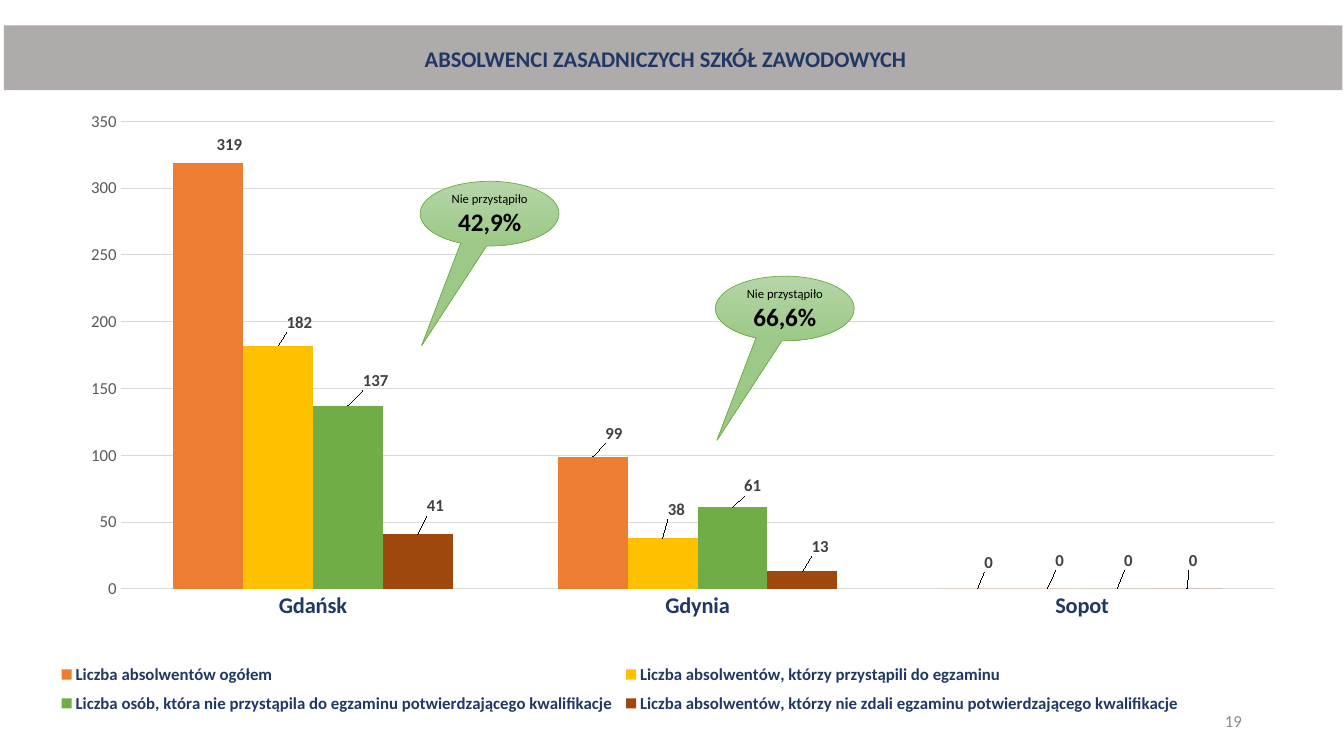
import pptx
import pptx.chart.data
import pptx.dml.color
import pptx.enum.chart
import pptx.enum.shapes
import pptx.enum.text
import pptx.oxml
import pptx.oxml.ns
import pptx.util

Cm, Pt = pptx.util.Cm, pptx.util.Pt
RGB = pptx.dml.color.RGBColor
ALIGN = pptx.enum.text.PP_ALIGN
ANCHOR = pptx.enum.text.MSO_ANCHOR
SHAPE = pptx.enum.shapes.MSO_SHAPE
XL = pptx.enum.chart

FONT = "Calibri"
BLACK, NAVY = RGB(0, 0, 0), RGB(0x20, 0x38, 0x64)
BAND = RGB(0xAF, 0xAB, 0xAB)
GRID, AXIS_TEXT = RGB(0xD9, 0xD9, 0xD9), RGB(0x59, 0x59, 0x59)
LABEL, PAGE_GREY = RGB(0x40, 0x40, 0x40), RGB(0x8C, 0x8C, 0x8C)
GREEN = RGB(0x70, 0xAD, 0x47)
BUBBLE = (RGB(0xB5, 0xD5, 0xA7), RGB(0x9C, 0xC9, 0x87))

TITLE = "ABSOLWENCI ZASADNICZYCH SZKÓŁ ZAWODOWYCH"
PAGE = "19"
CITIES = ["Gdańsk", "Gdynia", "Sopot"]
# name, colour, values, label shifts per city in thousandths of the chart size
SERIES = [
    ("Liczba absolwentów ogółem", RGB(0xED, 0x7D, 0x31), (319, 99, 0),
     ((17, -6), (17, -14), (9, -19))),
    ("Liczba absolwentów, którzy przystąpili do egzaminu",
     RGB(0xFF, 0xC0, 0), (182, 38, 0),
     ((17, -14), (11, -22), (10, -21))),
    ("Liczba osób, która nie przystąpila do egzaminu potwierdzającego kwalifikacje",
     GREEN, (137, 61, 0),
     ((22, -17), (16, -11), (9, -21))),
    ("Liczba absolwentów, którzy nie zdali egzaminu potwierdzającego kwalifikacje",
     RGB(0x9E, 0x48, 0x0E), (41, 13, 0),
     ((14, -21), (14, -17), (5, -21))),
]
CALLOUT_TEXT = "Nie przystąpiło"
CALLOUTS = [("42,9%", 10.59, 4.57), ("66,6%", 18.03, 6.96)]  # left, top in cm


def style(font, size, color, bold=False):
    font.name, font.size, font.bold = FONT, Pt(size), bold
    font.color.rgb = color


def write(tf, lines, align, anchor=ANCHOR.TOP, wrap=True):
    """Fill a frame with one paragraph per (text, size, colour, bold)."""
    tf.word_wrap, tf.vertical_anchor = wrap, anchor
    for i, (text, *look) in enumerate(lines):
        p = tf.paragraphs[0] if i == 0 else tf.add_paragraph()
        p.alignment = align
        r = p.add_run()
        r.text = text
        style(r.font, *look)


def layout(x, y, w=None, h=None, inner=False):
    """Manual chart layout; without a size, x and y are shifts."""
    parts = [("layoutTarget", "inner")] if inner else []
    if w is not None:
        parts += [("xMode", "edge"), ("yMode", "edge")]
    parts += [("x", x), ("y", y)]
    if w is not None:
        parts += [("w", w), ("h", h)]
    body = "".join(f'<c:{tag} val="{val}"/>' for tag, val in parts)
    return pptx.oxml.parse_xml(
        f'<c:layout {pptx.oxml.ns.nsdecls("c")}>'
        f'<c:manualLayout>{body}</c:manualLayout></c:layout>')


def add_title(s):
    band = s.shapes.add_shape(SHAPE.RECTANGLE, Cm(0.1), Cm(0.64), Cm(33.73), Cm(1.63))
    band.shadow.inherit = False
    band.fill.solid()
    band.fill.fore_color.rgb = BAND
    band.line.fill.background()
    box = s.shapes.add_textbox(Cm(-0.41), Cm(1.02), Cm(34.37), Cm(0.94))
    write(box.text_frame, [(TITLE, 16, NAVY, True)], ALIGN.CENTER)


def add_graduates_chart(s):
    data = pptx.chart.data.CategoryChartData()
    data.categories = CITIES
    for name, _, values, _ in SERIES:
        data.add_series(name, values)
    chart = s.shapes.add_chart(XL.XL_CHART_TYPE.COLUMN_CLUSTERED,
                               Cm(0.41), Cm(2.57), Cm(31.72), Cm(16.81), data).chart
    style(chart.font, 12, BLACK)
    chart.has_title = False

    plot = chart.plots[0]
    plot.gap_width, plot.overlap, plot.vary_by_categories = 150, 0, False
    area = plot._element.getparent()
    for old in area.findall(pptx.oxml.ns.qn("c:layout")):
        area.remove(old)
    area.insert(0, layout(0.083, 0.029, 0.917, 0.701, inner=True))

    for series, (_, color, _, shifts) in zip(plot.series, SERIES):
        series.format.fill.solid()
        series.format.fill.fore_color.rgb = color
        series.data_labels.show_value = True
        style(series.data_labels.font, 12, LABEL, True)
        for i, (dx, dy) in enumerate(shifts):
            label = series.points[i].data_label
            style(label.font, 12, LABEL, True)
            label.position = XL.XL_LABEL_POSITION.OUTSIDE_END
            dlbl = series.data_labels._element.findall(pptx.oxml.ns.qn("c:dLbl"))[i]
            dlbl.insert(1, layout(dx / 1000, dy / 1000))

    cat, val = chart.category_axis, chart.value_axis
    for axis in (cat, val):
        axis.major_tick_mark = axis.minor_tick_mark = XL.XL_TICK_MARK.NONE
    style(cat.tick_labels.font, 16, NAVY, True)
    style(val.tick_labels.font, 12, AXIS_TEXT)
    val.minimum_scale, val.maximum_scale, val.major_unit = 0, 350, 50
    val.has_major_gridlines = True
    for line in (cat.format.line, val.major_gridlines.format.line):
        line.color.rgb, line.width = GRID, Pt(0.75)
    val.format.line.fill.background()

    chart.has_legend = True
    legend = chart.legend
    legend.position = XL.XL_LEGEND_POSITION.BOTTOM
    legend.include_in_layout = False
    style(legend.font, 12, NAVY, True)
    for old in legend._element.findall(pptx.oxml.ns.qn("c:layout")):
        legend._element.remove(old)
    legend._element.find(pptx.oxml.ns.qn("c:legendPos")).addnext(
        layout(0.03, 0.83, 0.9, 0.1))


def add_callout(s, share, left, top):
    sp = s.shapes.add_shape(SHAPE.OVAL_CALLOUT, Cm(left), Cm(top), Cm(3.5), Cm(1.63))
    sp.shadow.inherit = False
    sp.adjustments[0], sp.adjustments[1] = -0.489, 2.039
    sp.fill.gradient()
    sp.fill.gradient_angle = 270
    for stop, color in zip(sp.fill.gradient_stops, BUBBLE):
        stop.color.rgb = color
    sp.fill.gradient_stops[0].position = 0
    sp.fill.gradient_stops[1].position = 1
    sp.line.color.rgb, sp.line.width = GREEN, Pt(0.5)
    write(sp.text_frame, [(CALLOUT_TEXT, 9, BLACK, False), (share, 18, BLACK, True)],
          ALIGN.CENTER, ANCHOR.MIDDLE, wrap=False)


def main():
    prs = pptx.Presentation()
    prs.slide_width, prs.slide_height = Cm(33.87), Cm(19.05)
    s = prs.slides.add_slide(prs.slide_layouts[6])
    add_title(s)
    add_graduates_chart(s)
    page = s.shapes.add_textbox(Cm(23.93), Cm(17.65), Cm(7.62), Cm(1.02))
    write(page.text_frame, [(PAGE, 12, PAGE_GREY)], ALIGN.RIGHT, ANCHOR.MIDDLE)
    for callout in CALLOUTS:
        add_callout(s, *callout)
    prs.save("out.pptx")


if __name__ == "__main__":
    main()
